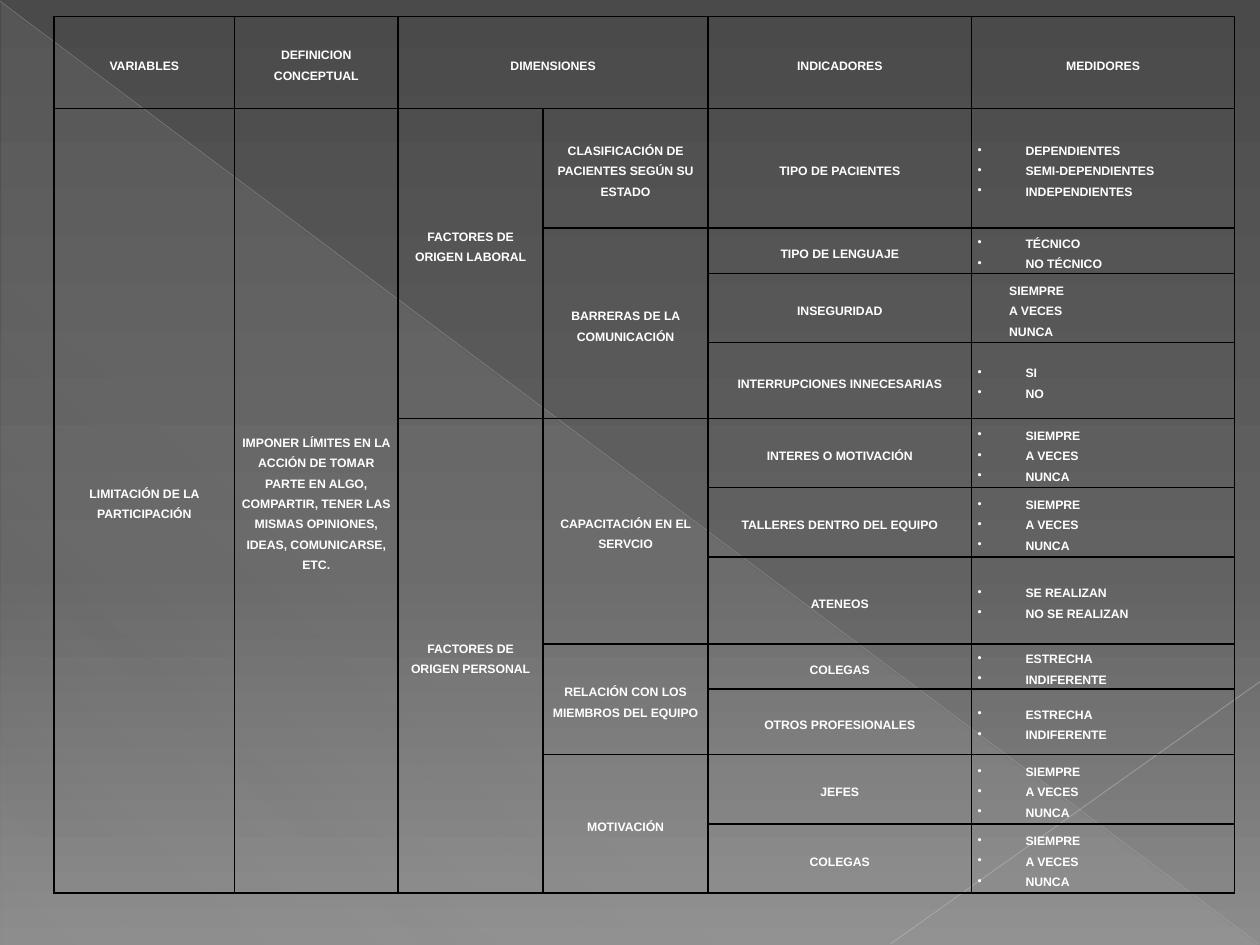
import pptx
import pptx.util
import pptx.dml.color
import pptx.enum.shapes
import pptx.enum.text
import pptx.oxml
import pptx.oxml.ns
from lxml import etree

Inches, Pt = pptx.util.Inches, pptx.util.Pt
RGBColor = pptx.dml.color.RGBColor
qn = pptx.oxml.ns.qn
ALIGN = pptx.enum.text.PP_ALIGN

WHITE = RGBColor(0xFF, 0xFF, 0xFF)
BLACK = RGBColor(0, 0, 0)
DARK = RGBColor(0x4A, 0x4A, 0x4A)
MID = RGBColor(0x62, 0x62, 0x62)
LIGHT = RGBColor(0x8C, 0x8C, 0x8C)
PALE = RGBColor(0xD2, 0xD2, 0xD2)
SILVER = RGBColor(0xBF, 0xBF, 0xBF)
ASH = RGBColor(0xC6, 0xC6, 0xC6)

COLS = [1.43, 1.3, 1.15, 1.31, 2.09, 2.09]
ROWS = [0.73, 0.95, 0.36, 0.55, 0.6, 0.55, 0.55, 0.69, 0.36, 0.52, 0.55, 0.55]
HEADS = [(0, "VARIABLES"), (1, "DEFINICION CONCEPTUAL"), (2, "DIMENSIONES"),
         (4, "INDICADORES"), (5, "MEDIDORES")]
# row, column, rows spanned, text
GROUPS = [
    (1, 0, 11, "LIMITACIÓN DE LA PARTICIPACIÓN"),
    (1, 1, 11, "IMPONER LÍMITES EN LA ACCIÓN DE TOMAR PARTE EN ALGO, COMPARTIR, "
               "TENER LAS MISMAS OPINIONES, IDEAS, COMUNICARSE, ETC."),
    (1, 2, 4, "FACTORES DE ORIGEN LABORAL"),
    (5, 2, 7, "FACTORES DE ORIGEN PERSONAL"),
    (1, 3, 1, "CLASIFICACIÓN DE PACIENTES SEGÚN SU ESTADO"),
    (2, 3, 3, "BARRERAS DE LA COMUNICACIÓN"),
    (5, 3, 3, "CAPACITACIÓN EN EL SERVCIO"),
    (8, 3, 2, "RELACIÓN CON LOS MIEMBROS DEL EQUIPO"),
    (10, 3, 2, "MOTIVACIÓN"),
]
OFTEN = ["SIEMPRE", "A VECES", "NUNCA"]
CLOSE = ["ESTRECHA", "INDIFERENTE"]
PLAIN = "INSEGURIDAD"  # the one indicator whose measures have no bullets
SCALES = [
    ("TIPO DE PACIENTES", ["DEPENDIENTES", "SEMI-DEPENDIENTES", "INDEPENDIENTES"]),
    ("TIPO DE LENGUAJE", ["TÉCNICO", "NO TÉCNICO"]),
    (PLAIN, OFTEN),
    ("INTERRUPCIONES INNECESARIAS", ["SI", "NO"]),
    ("INTERES O MOTIVACIÓN", OFTEN),
    ("TALLERES DENTRO DEL EQUIPO", OFTEN),
    ("ATENEOS", ["SE REALIZAN", "NO SE REALIZAN"]),
    ("COLEGAS", CLOSE),
    ("OTROS PROFESIONALES", CLOSE),
    ("JEFES", OFTEN),
    ("COLEGAS", OFTEN),
]


def add_color(parent, color, alpha=100):
    node = etree.SubElement(parent, qn("a:srgbClr"), val=str(color))
    if alpha < 100:
        etree.SubElement(node, qn("a:alpha"), val=str(alpha * 1000))


def shade(fill, root, stops, angle):
    """Give fill, which lies under root, stops of (percent, colour, opacity)."""
    fill.gradient()
    grad = next(root.iter(qn("a:gradFill")))
    ramp = grad.find(qn("a:gsLst"))
    for old in list(ramp):
        ramp.remove(old)
    for pos, color, alpha in stops:
        stop = etree.SubElement(ramp, qn("a:gs"), pos=str(pos * 1000))
        add_color(stop, color, alpha)
    grad.find(qn("a:lin")).set("ang", str(angle * 60000))


def add_ray(slide, start, end, color, width, alpha):
    ray = slide.shapes.add_connector(
        pptx.enum.shapes.MSO_CONNECTOR.STRAIGHT,
        *(Inches(n) for n in start + end))
    ray.line.width = Pt(width)
    ray.line.color.rgb = color
    tint = next(ray.element.iter(qn("a:srgbClr")))
    etree.SubElement(tint, qn("a:alpha"), val=str(alpha * 1000))
    etree.SubElement(ray.element.spPr, qn("a:effectLst"))


def add_backdrop(slide, width, height):
    shade(slide.background.fill, slide.element,
          [(0, DARK, 100), (60, MID, 100), (100, LIGHT, 100)], 90)
    wedge = slide.shapes.add_shape(
        pptx.enum.shapes.MSO_SHAPE.RIGHT_TRIANGLE,
        Inches(0.01), Inches(0.02), Inches(width - 0.02), Inches(height - 0.02))
    wedge.shadow.inherit = False
    wedge.line.fill.background()
    shade(wedge.fill, wedge.element,
          [(0, PALE, 10), (70, PALE, 8), (100, PALE, 1)], 133)
    base = height - 0.01
    add_ray(slide, (0, 0.01), (width - 0.01, base), SILVER, 0.39, 35)
    add_ray(slide, (width, 5.41), (7.07, base), ASH, 0.47, 45)


def style_cell(cell):
    cell.margin_left = cell.margin_right = Inches(0.05)
    cell.margin_top = cell.margin_bottom = 0
    cell.vertical_anchor = pptx.enum.text.MSO_ANCHOR.MIDDLE
    cell.fill.background()
    props = cell._tc.tcPr
    for spot, side in enumerate(("a:lnL", "a:lnR", "a:lnT", "a:lnB")):
        edge = pptx.oxml.parse_xml(
            f'<{side} w="{Pt(1)}" {pptx.oxml.ns.nsdecls("a")}><a:solidFill/></{side}>')
        add_color(edge[0], BLACK)
        props.insert(spot, edge)


def write(cell, lines, align=ALIGN.CENTER, left=0, hang=0, bullet=False):
    frame = cell.text_frame
    frame.text = "\n".join(lines)
    for para in frame.paragraphs:
        para.alignment = align
        para.line_spacing = 1.5
        props = para._p.get_or_add_pPr()
        if left:
            props.set("marL", str(Inches(left)))
            props.set("indent", str(-Inches(hang)))
        if bullet:
            etree.SubElement(props, qn("a:buChar"), char="•")
        font = para.font
        font.name, font.size, font.bold = "Arial", Pt(7), True
        font.color.rgb = WHITE


def add_matrix(slide, left, top):
    table = slide.shapes.add_table(
        len(ROWS), len(COLS), Inches(left), Inches(top),
        Inches(sum(COLS)), Inches(sum(ROWS))).table
    table.first_row = table.horz_banding = False
    for col, width in zip(table.columns, COLS):
        col.width = Inches(width)
    for row, height in zip(table.rows, ROWS):
        row.height = Inches(height)
    for cell in table.iter_cells():
        style_cell(cell)
        write(cell, [""])

    for col, text in HEADS:
        write(table.cell(0, col), [text])
    table.cell(0, 2).merge(table.cell(0, 3))
    for row, col, span, text in GROUPS:
        cell = table.cell(row, col)
        write(cell, [text])
        if span > 1:
            cell.merge(table.cell(row + span - 1, col))
    table.cell(1, 2).margin_bottom = Inches(0.31)
    for row, (name, marks) in enumerate(SCALES, 1):
        write(table.cell(row, 4), [name])
        dots = name != PLAIN
        left, hang = (0.38, 0.38) if dots else (0.5, 0.25)
        write(table.cell(row, 5), marks, ALIGN.JUSTIFY, left, hang, dots)


def main():
    deck = pptx.Presentation()
    deck.slide_width, deck.slide_height = Inches(10), Inches(7.5)
    slide = deck.slides.add_slide(deck.slide_layouts[6])
    add_backdrop(slide, 10, 7.5)
    add_matrix(slide, 0.43, 0.13)
    deck.save("out.pptx")


if __name__ == "__main__":
    main()
